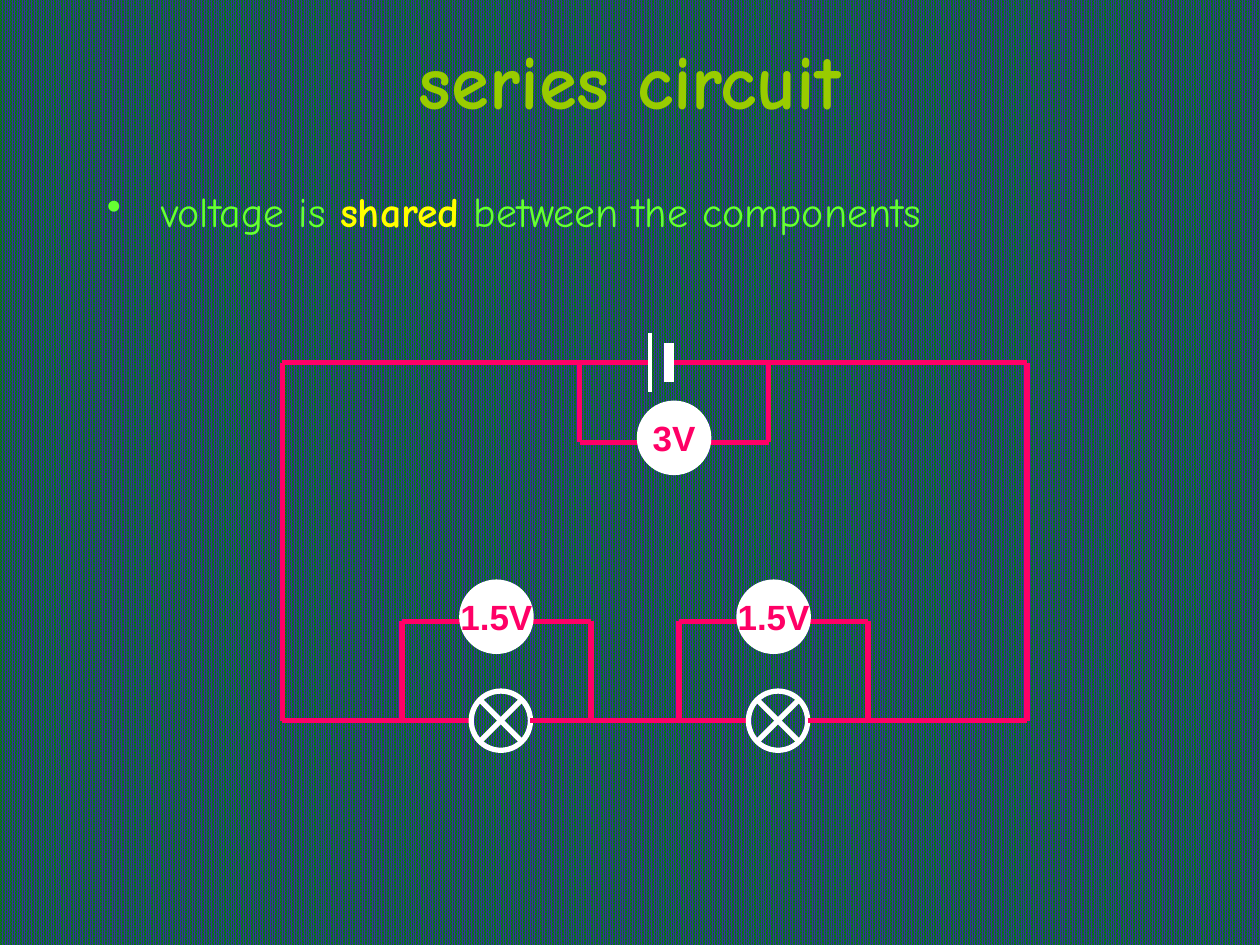
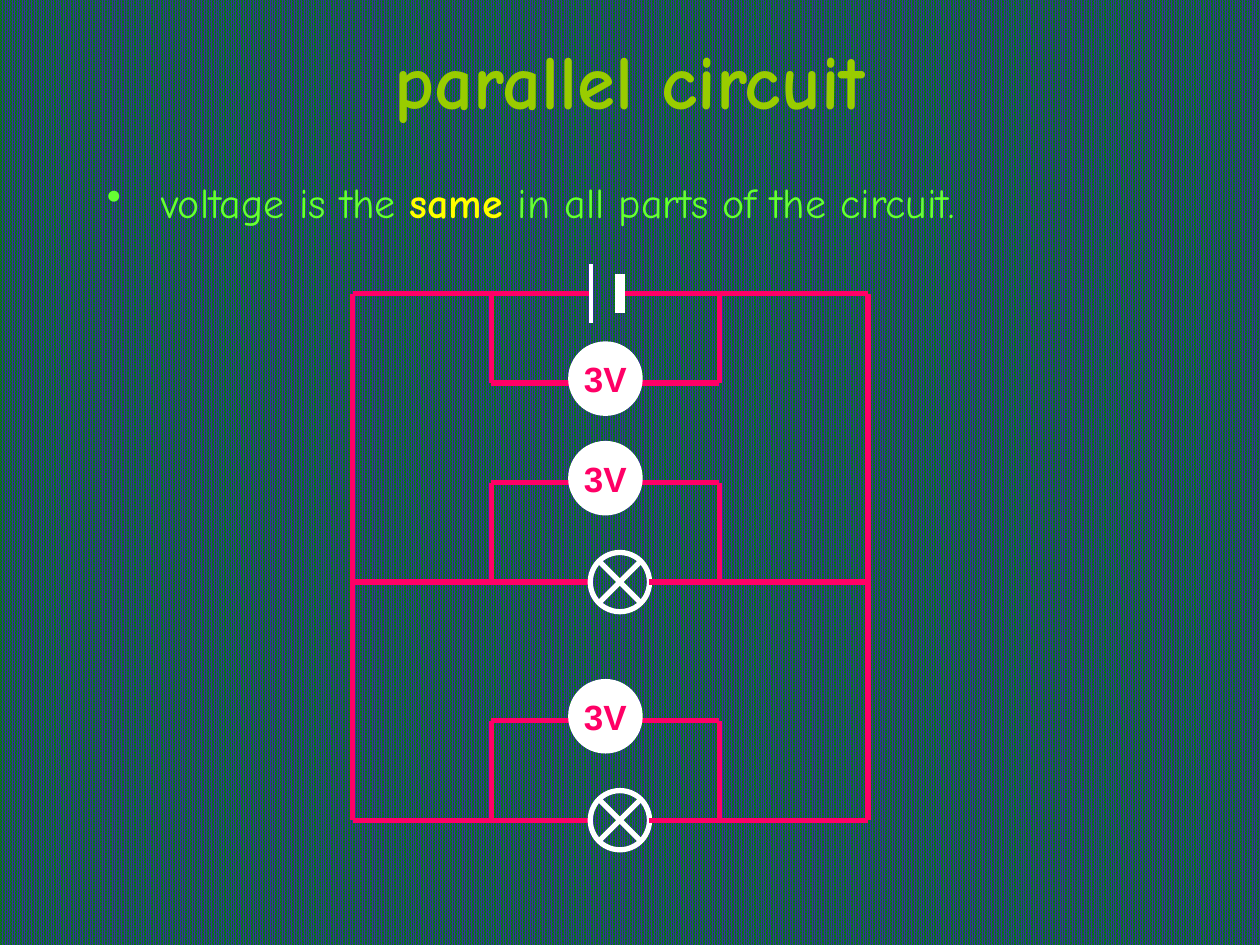
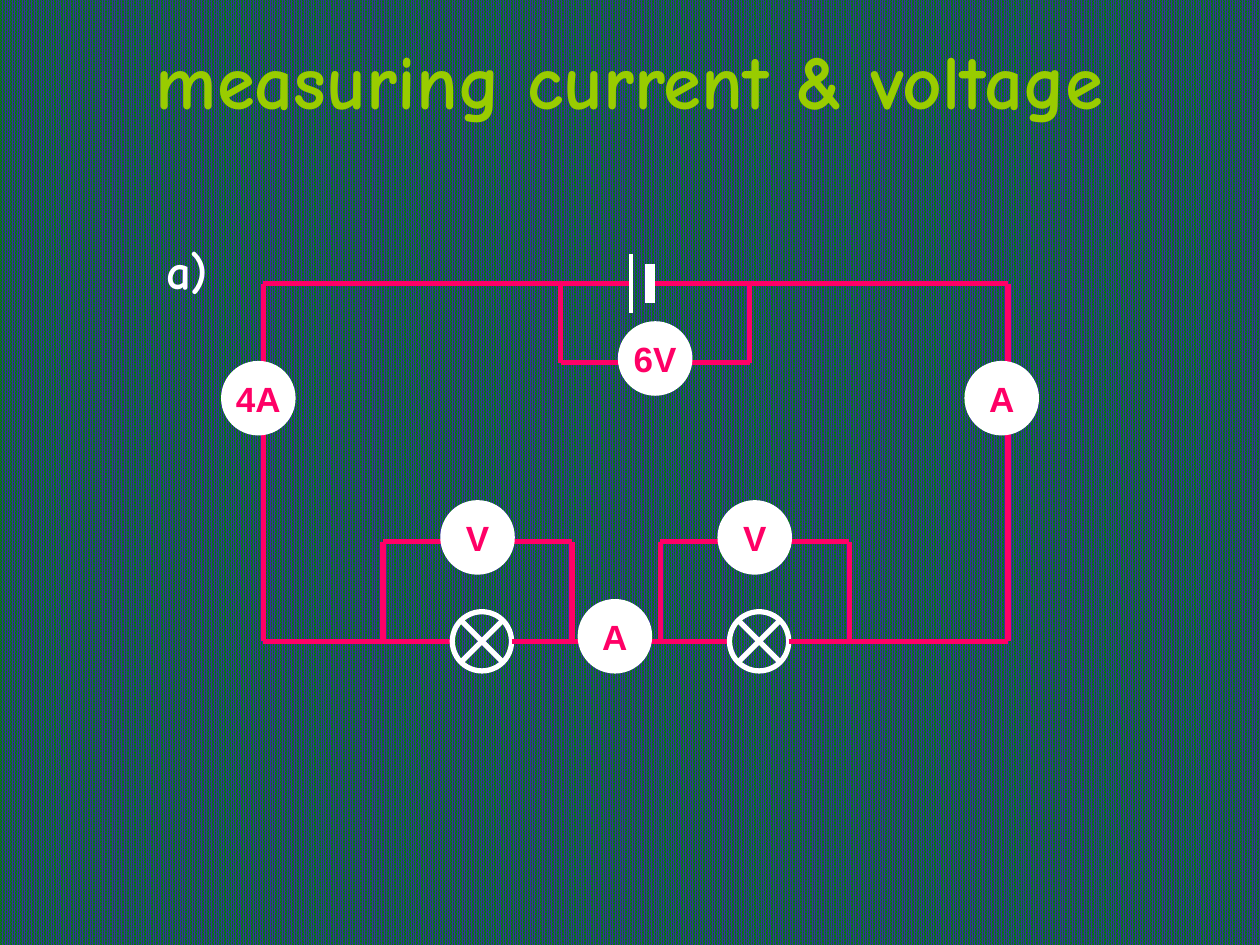
from lxml import etree
from pptx import Presentation
from pptx.dml.color import RGBColor
from pptx.enum.dml import MSO_PATTERN
from pptx.enum.shapes import MSO_CONNECTOR, MSO_SHAPE
from pptx.enum.text import MSO_ANCHOR, MSO_AUTO_SIZE, PP_ALIGN
from pptx.oxml.ns import qn
from pptx.util import Inches, Pt

STRAIGHT = MSO_CONNECTOR.STRAIGHT
OVAL, CROSS = MSO_SHAPE.OVAL, MSO_SHAPE.FLOWCHART_SUMMING_JUNCTION
TOP, MIDDLE = MSO_ANCHOR.TOP, MSO_ANCHOR.MIDDLE
CENTER = PP_ALIGN.CENTER
NO_FIT = MSO_AUTO_SIZE.NONE
HATCH = MSO_PATTERN.PERCENT_90

BLUE = RGBColor(0x33, 0x33, 0x99)
GREEN = RGBColor(0x00, 0x80, 0x00)
OLIVE = RGBColor(0x99, 0xCC, 0x00)
LIME = RGBColor(0x66, 0xFF, 0x33)
YELLOW = RGBColor(0xFF, 0xFF, 0x00)
PINK = RGBColor(0xFF, 0x00, 0x66)
WHITE = RGBColor(0xFF, 0xFF, 0xFF)

HAND, SANS = "Comic Neue", "Arial"
METER, LAMP = 0.55, 0.47  # diameters
LIFT = 0.035  # meters sit this much above their wire
INDENT = 0.43


def style(font, name, size, color, bold=True):
    font.name, font.size, font.bold = name, Pt(size), bold
    font.color.rgb = color


class Deck:
    def __init__(self):
        self.prs = Presentation()
        self.prs.slide_width, self.prs.slide_height = Inches(10), Inches(7.5)
        fill = self.prs.slide_master.background.fill
        fill.patterned()
        fill.pattern = HATCH
        fill.fore_color.rgb, fill.back_color.rgb = BLUE, GREEN
        self.slide = None

    def start(self, title):
        """Add a slide with its heading."""
        self.slide = self.prs.slides.add_slide(self.prs.slide_layouts[5])
        head = self.slide.shapes.title
        head.left, head.top = Inches(0), Inches(0.21)
        head.width, head.height = Inches(10), Inches(0.83)
        frame = head.text_frame
        frame.text = title
        frame.auto_size, frame.vertical_anchor = NO_FIT, TOP
        para = frame.paragraphs[0]
        para.alignment = CENTER
        style(para.runs[0].font, HAND, 44, OLIVE)

    def box(self, left, top, width, height):
        """Add an empty text box and return its first paragraph."""
        box = self.slide.shapes.add_textbox(
            Inches(left), Inches(top), Inches(width), Inches(height))
        box.text_frame.word_wrap = True
        return box.text_frame.paragraphs[0]

    def bullet(self, top, width, height, space, before, key, after):
        """Add a bulleted line whose key word stands out."""
        para = self.box(0.75, top, width, height)
        para.line_spacing = space
        for text, color in ((before, LIME), (key, YELLOW), (after, LIME)):
            run = para.add_run()
            run.text = text
            style(run.font, HAND, 24, color, color == YELLOW)
        props = para._p.get_or_add_pPr()
        props.set("marL", str(Inches(INDENT)))
        props.set("indent", str(-Inches(INDENT)))
        etree.SubElement(props, qn("a:buChar")).set("char", "•")

    def label(self, left, top, text):
        para = self.box(left, top, 0.71, 0.57)
        para.text = text
        style(para.runs[0].font, HAND, 28, WHITE)

    def wire(self, x1, y1, x2, y2, color=PINK, width=3):
        line = self.slide.shapes.add_connector(
            STRAIGHT, Inches(x1), Inches(y1), Inches(x2), Inches(y2))
        line.line.color.rgb, line.line.width = color, Pt(width)
        etree.SubElement(line._element.spPr, qn("a:effectLst"))

    def disc(self, kind, x, y, size):
        """Add a white-rimmed round shape centred on x, y."""
        disc = self.slide.shapes.add_shape(
            kind, Inches(x - size / 2), Inches(y - size / 2),
            Inches(size), Inches(size))
        disc.shadow.inherit = False
        disc.line.color.rgb, disc.line.width = WHITE, Pt(3)
        return disc

    def lamp(self, x, y):
        self.disc(CROSS, x, y, LAMP).fill.background()

    def meter(self, x, y, text):
        disc = self.disc(OVAL, x, y, METER)
        disc.fill.solid()
        disc.fill.fore_color.rgb = WHITE
        frame = disc.text_frame
        frame.text = text
        frame.word_wrap, frame.vertical_anchor = False, MIDDLE
        para = frame.paragraphs[0]
        para.alignment = CENTER
        style(para.runs[0].font, SANS, 20, PINK)

    def rail(self, left, right, y, *lamps):
        """Run a wire through lamps centred at the given places."""
        start = left
        for x in lamps:
            self.wire(start, y, x - LAMP / 2, y)
            self.lamp(x, y)
            start = x + LAMP / 2
        self.wire(start, y, right, y)

    def supply(self, left, right, y, thin, thick):
        """Run a wire broken by a cell with plates at thin and thick."""
        self.wire(left, y, thin, y)
        self.wire(thick, y, right, y)
        self.wire(thin, y - 0.235, thin, y + 0.235, WHITE, 2.25)
        self.wire(thick, y - 0.155, thick, y + 0.155, WHITE, 6)

    def loop(self, left, width, rail, y, text):
        """Tap a rail on both sides and put a voltmeter across, at y."""
        right = left + width
        self.wire(left, y, right, y)
        for x in (left, right):
            self.wire(x, rail, x, y)
        self.meter(left + width / 2, y - LIFT, text)

    def sides(self, left, right, top, bottom):
        for x in (left, right):
            self.wire(x, top, x, bottom)

    def series(self, left, top, total, share):
        """Draw a cell and two lamps in one ring, each with a voltmeter."""
        right, bottom, span = left + 5.91, top + 2.84, 1.5
        taps = (left + 0.95, left + 3.15)
        self.sides(left, right, top, bottom)
        self.supply(left, right, top, left + 2.92, left + 3.07)
        self.rail(left, right, bottom, *(x + 0.785 for x in taps))
        self.loop(left + 2.36, span, top, top + 0.63, total)
        for x in taps:
            self.loop(x, span, bottom, bottom - 0.79, share)

    def parallel(self, left, right, top, rows, text):
        """Draw a cell over one lamp per row, each with a voltmeter."""
        tap, span = 3.9, 1.81
        self.sides(left, right, top, rows[-1])
        self.supply(left, right, top, 4.69, 4.92)
        self.loop(tap, span, top, top + 0.71, text)
        for y in rows:
            self.rail(left, right, y, 4.92)
            self.loop(tap, span, y, y - 0.79, text)


def main():
    deck = Deck()

    deck.start("series circuit")
    deck.bullet(1.47, 8.27, 0.46, 0.9,
                "voltage is ", "shared", " between the components")
    deck.series(2.24, 2.88, "3V", "1.5V")

    deck.start("parallel circuit")
    deck.bullet(1.23, 8.58, 0.62, 1.3,
                "voltage is the ", "same ", "in all parts of the circuit.")
    deck.parallel(2.8, 6.89, 2.33, (4.62, 6.51), "3V")

    deck.start("measuring current & voltage")
    deck.label(1.22, 1.86, "a)")
    deck.series(2.09, 2.25, "6V", "V")
    for x, y, text in ((2.05, 3.16, "4A"), (4.88, 5.05, "A"), (7.95, 3.16, "A")):
        deck.meter(x, y, text)

    deck.prs.save("out.pptx")


if __name__ == "__main__":
    main()
